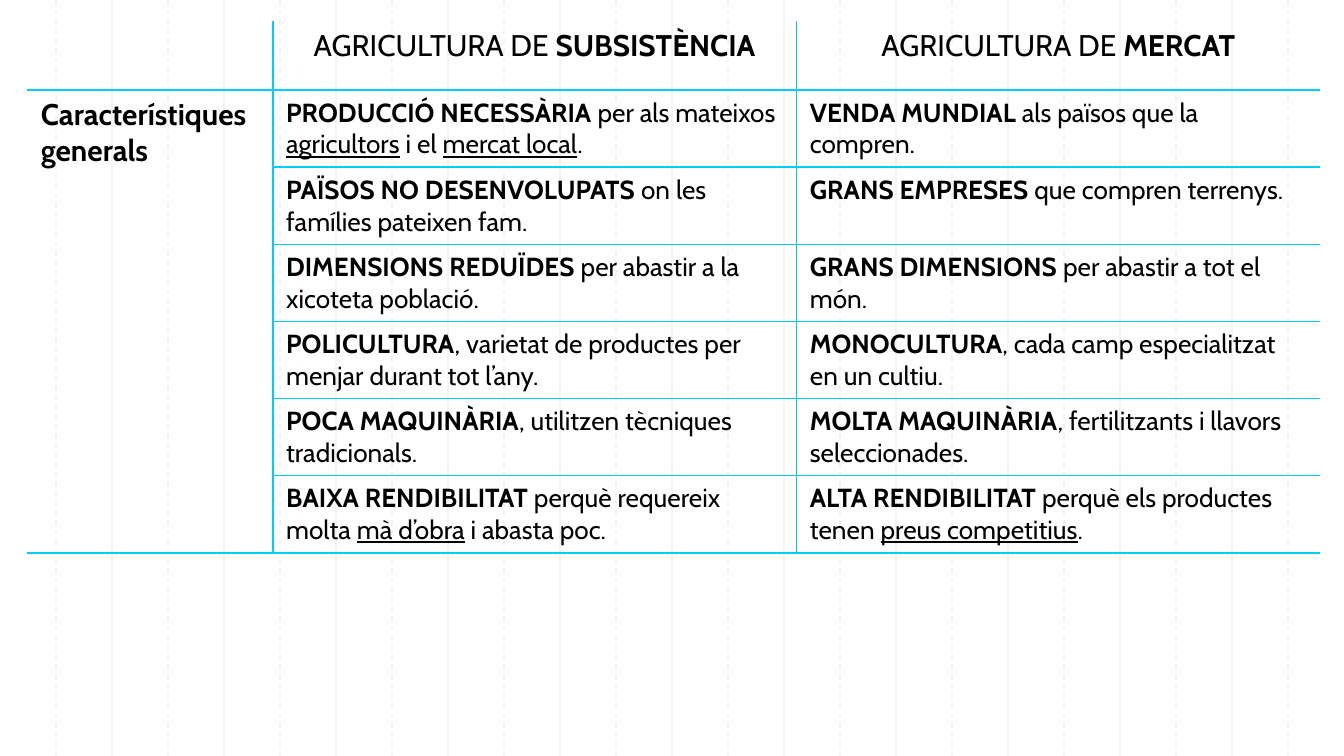
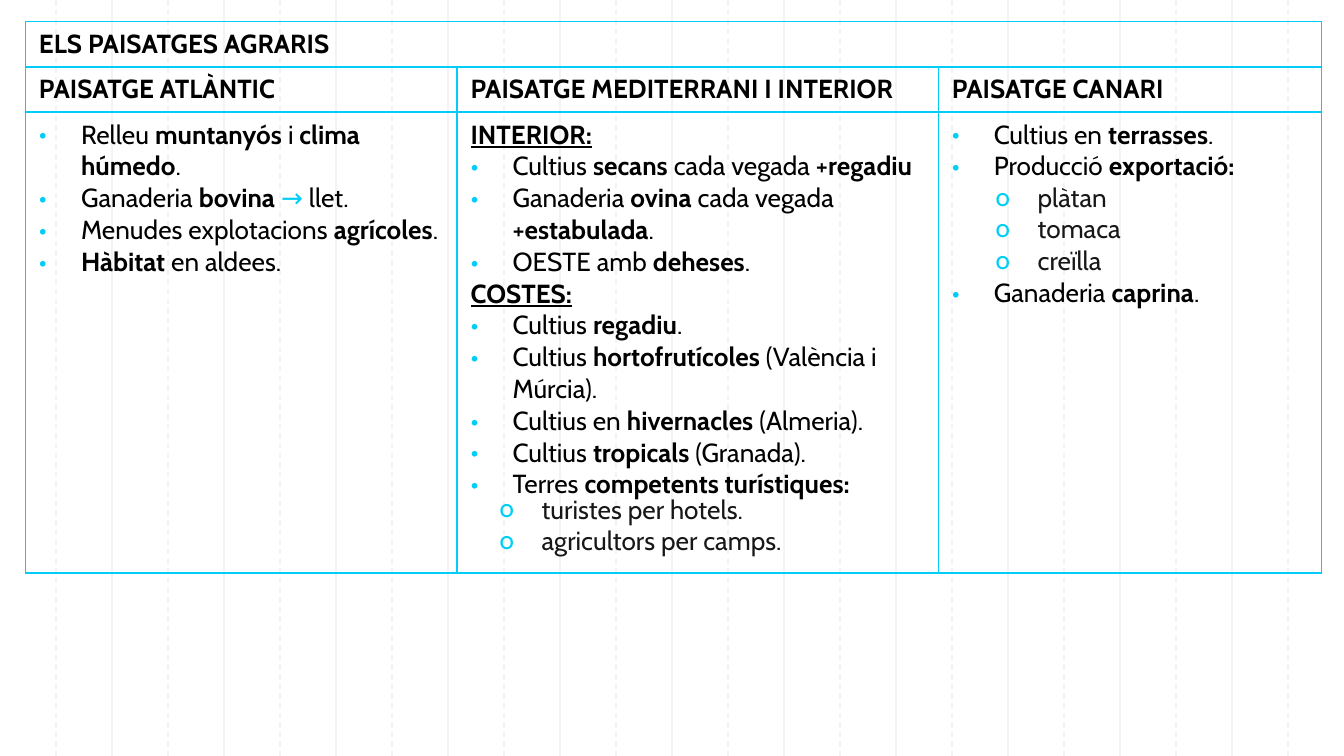
from lxml.etree import SubElement
from pptx import Presentation
from pptx.dml.color import RGBColor
from pptx.enum.dml import MSO_LINE
from pptx.enum.shapes import MSO_CONNECTOR
from pptx.enum.text import MSO_AUTO_SIZE, PP_ALIGN
from pptx.oxml import parse_xml
from pptx.oxml.ns import nsdecls, qn
from pptx.util import Pt

WIDTH, HEIGHT = 720, 405
FONT = "Cabin"
BLACK, DARK, CYAN, GRID = "000000", "171717", "00CEF6", "F3F3F3"
GRID_STEP = 30
INDENT = 22.5
LINE_PITCH = 17

FARMING = [
    ["", "AGRICULTURA DE *SUBSISTÈNCIA*", "AGRICULTURA DE *MERCAT*"],
    ["*Característiques generals*",
     "*PRODUCCIÓ NECESSÀRIA* per als mateixos _agricultors_ i el _mercat local_.",
     "*VENDA MUNDIAL* als països que la compren."],
    ["", "*PAÏSOS NO DESENVOLUPATS* on les famílies pateixen fam.",
     "*GRANS EMPRESES* que compren terrenys."],
    ["", "*DIMENSIONS REDUÏDES* per abastir a la xicoteta població.",
     "*GRANS DIMENSIONS* per abastir a tot el món."],
    ["", "*POLICULTURA*, varietat de productes per menjar durant tot l’any.",
     "*MONOCULTURA*, cada camp especialitzat en un cultiu."],
    ["", "*POCA MAQUINÀRIA*, utilitzen tècniques tradicionals.",
     "*MOLTA MAQUINÀRIA*, fertilitzants i llavors seleccionades."],
    ["", "*BAIXA RENDIBILITAT* perquè requereix molta _mà d’obra_ i abasta poc.",
     "*ALTA RENDIBILITAT* perquè els productes tenen _preus competitius_."],
]

LANDSCAPE_HEADS = ["*PAISATGE ATLÀNTIC*", "*PAISATGE MEDITERRANI I INTERIOR*",
                   "*PAISATGE CANARI*"]
ATLANTIC = ["Relleu *muntanyós* i *clima húmedo*.",
            "Ganaderia *bovina *^→^ llet.",
            "Menudes explotacions *agrícoles*.",
            "*Hàbitat* en aldees."]
INLAND = ["Cultius *secans *cada vegada +*regadiu*",
          "Ganaderia *ovina* cada vegada +*estabulada*.",
          "OESTE amb *deheses*."]
COAST = ["Cultius *regadiu*.",
         "Cultius *hortofrutícoles* (València i Múrcia).",
         "Cultius en *hivernacles* (Almeria).",
         "Cultius *tropicals* (Granada).",
         "Terres *competents turístiques:*"]
CANARY = ["Cultius en *terrasses*.", "Producció *exportació:*", "Ganaderia *caprina*."]
TOURISM = ["turistes per hotels.", "agricultors per camps."]
EXPORTS = ["plàtan", "tomaca", "creïlla"]


def rgb(color):
    """Turn a hex string into a colour."""
    return RGBColor.from_string(color)


def add_run(p, text, size, color, bold, underline):
    """Append one formatted run."""
    r = p.add_run()
    r.text = text
    f = r.font
    f.name, f.size, f.bold, f.underline = FONT, Pt(size), bold, underline
    f.color.rgb = rgb(color)


def write_marked(p, text, size=14, color=BLACK):
    """Write text where *bold*, _underline_ and ^accent^ mark the runs."""
    for i, part in enumerate(text.split("*")):
        for j, piece in enumerate(part.split("_")):
            for k, run in enumerate(piece.split("^")):
                if run:
                    add_run(p, run, size, CYAN if k % 2 else color,
                            bool(i % 2), bool(j % 2))


def set_bullet(p, char):
    """Give a paragraph a hanging cyan bullet."""
    pPr = p._p.get_or_add_pPr()
    pPr.set("marL", str(Pt(INDENT)))
    pPr.set("indent", str(-Pt(INDENT)))
    SubElement(SubElement(pPr, qn("a:buClr")), qn("a:srgbClr")).set("val", CYAN)
    SubElement(pPr, qn("a:buFont")).set("typeface", FONT)
    SubElement(pPr, qn("a:buChar")).set("char", char)


def write_list(tf, items, char="•", color=BLACK, title=None):
    """Append an optional underlined title and its bulleted items."""
    lines = [(f"*_{title}_*", None)] if title else []
    for text, bullet in lines + [(item, char) for item in items]:
        p = tf.add_paragraph() if tf.text else tf.paragraphs[0]
        if bullet:
            set_bullet(p, bullet)
        write_marked(p, text, color=color)


def set_borders(cell, sides):
    """Draw the named cell sides in cyan and clear the others."""
    tcPr = cell._tc.get_or_add_tcPr()
    for i, side in enumerate("LRTB"):
        fill = (f'<a:solidFill><a:srgbClr val="{CYAN}"/></a:solidFill>'
                if side in sides else "<a:noFill/>")
        tcPr.insert(i, parse_xml(
            f'<a:ln{side} {nsdecls("a")} w="{Pt(1)}">{fill}</a:ln{side}>'))


def add_grid_table(s, left, top, widths, heights, framed):
    """Add a clear table with cyan rules, with or without an outer frame."""
    frame = s.shapes.add_table(len(heights), len(widths), Pt(left), Pt(top),
                               Pt(sum(widths)), Pt(sum(heights)))
    table = frame.table
    table.first_row = table.horz_banding = False
    for column, width in zip(table.columns, widths):
        column.width = Pt(width)
    for i, height in enumerate(heights):
        table.rows[i].height = Pt(height)
        for j in range(len(widths)):
            sides = "B"
            sides += "L" if framed or j > 0 else ""
            sides += "R" if framed or j < len(widths) - 1 else ""
            sides += "T" if framed or i > 0 else ""
            table.cell(i, j).fill.background()
            set_borders(table.cell(i, j), sides)
    return table


def add_sublist(s, left, top, width, height, items):
    """Add a text box with second-level items."""
    tf = s.shapes.add_textbox(Pt(left), Pt(top), Pt(width), Pt(height)).text_frame
    tf.word_wrap = False
    tf.auto_size = MSO_AUTO_SIZE.SHAPE_TO_FIT_TEXT
    write_list(tf, items, "o", DARK)


def add_slide(prs):
    """Add a blank white slide with alternating dashed and solid guide lines."""
    s = prs.slides.add_slide(prs.slide_layouts[6])
    s.background.fill.solid()
    s.background.fill.fore_color.rgb = rgb("FFFFFF")
    for x in range(GRID_STEP, WIDTH, GRID_STEP):
        line = s.shapes.add_connector(MSO_CONNECTOR.STRAIGHT,
                                      Pt(x), 0, Pt(x), Pt(HEIGHT))
        line.line.color.rgb = rgb(GRID)
        line.line.width = Pt(0.75)
        if x // GRID_STEP % 2:
            line.line.dash_style = MSO_LINE.DASH
        SubElement(line._element.spPr, qn("a:effectLst"))
    return s


def build_farming(prs):
    """Compare subsistence and market farming."""
    s = add_slide(prs)
    table = add_grid_table(s, 14.7, 11.5, [131.4, 280.6, 280.6],
                           [36.8] * len(FARMING), framed=False)
    table.cell(1, 0).merge(table.cell(len(FARMING) - 1, 0))
    for i, row in enumerate(FARMING):
        for j, text in enumerate(row):
            if text:
                p = table.cell(i, j).text_frame.paragraphs[0]
                p.alignment = PP_ALIGN.LEFT if i else PP_ALIGN.CENTER
                write_marked(p, text, 14 if i and j else 16)


def build_landscapes(prs):
    """Describe the farming landscapes."""
    s = add_slide(prs)
    table = add_grid_table(s, 13.7, 11.5, [231.2, 257.8, 205.2],
                           [24.2, 24.2, 247], framed=True)
    table.cell(0, 0).merge(table.cell(0, 2))
    write_marked(table.cell(0, 0).text_frame.paragraphs[0], "*ELS PAISATGES AGRARIS*")
    for j, head in enumerate(LANDSCAPE_HEADS):
        write_marked(table.cell(1, j).text_frame.paragraphs[0], head)
    atlantic, mediterranean, canary = [table.cell(2, j).text_frame for j in range(3)]
    write_list(atlantic, ATLANTIC)
    write_list(mediterranean, INLAND, title="INTERIOR:")
    write_list(mediterranean, COAST, title="COSTES:")
    write_list(canary, CANARY)
    canary.paragraphs[-1].space_before = Pt(LINE_PITCH * len(EXPORTS))
    add_sublist(s, 260.6, 260.6, 169.2, 41, TOURISM)
    add_sublist(s, 526.3, 93.6, 82, 58.3, EXPORTS)


def main():
    """Build and save the presentation."""
    prs = Presentation()
    prs.slide_width, prs.slide_height = Pt(WIDTH), Pt(HEIGHT)
    build_farming(prs)
    build_landscapes(prs)
    prs.save("out.pptx")


if __name__ == "__main__":
    main()
